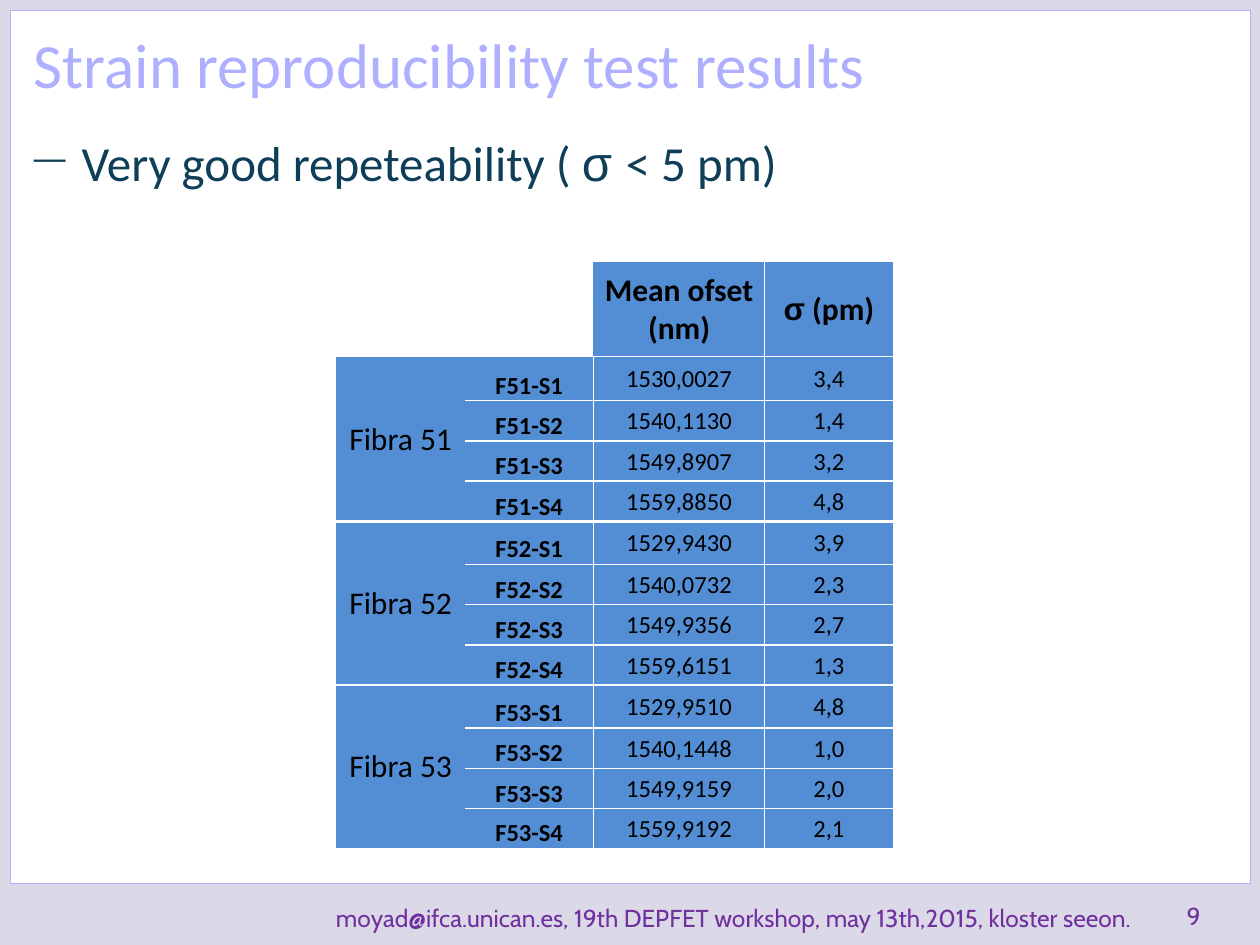
from dataclasses import dataclass

from lxml.etree import SubElement
from pptx import Presentation
from pptx.dml.color import RGBColor
from pptx.enum.shapes import MSO_SHAPE
from pptx.enum.text import MSO_ANCHOR, PP_ALIGN
from pptx.oxml.ns import qn
from pptx.util import Inches, Pt


@dataclass(frozen=True)
class Theme:
    backdrop: str = "DBD9E7"
    white: str = "FFFFFF"
    lilac: str = "AFAFFF"
    navy: str = "0E3E58"
    purple: str = "7030A0"
    black: str = "000000"
    blue: str = "538ED5"
    font: str = "Calibri"
    symbol_font: str = "Arial"
    footer_font: str = "Cabin"
    title_size: int = 36
    body_size: int = 28
    heading_size: int = 18
    small_size: int = 14


THEME = Theme()
NO_STYLE = "{2D5ABB26-0587-4C30-8999-92F81FD0307C}"
COLUMN_WIDTHS = (1.02, 1.02, 1.36, 1.02)
HEADER_HEIGHT = 0.75
SENSOR_HEIGHTS = (0.35, 0.32, 0.32, 0.32, 0.34, 0.32, 0.32, 0.32, 0.34, 0.32, 0.32, 0.31)
FIBRES = {
    51: (("1530,0027", "3,4"), ("1540,1130", "1,4"), ("1549,8907", "3,2"), ("1559,8850", "4,8")),
    52: (("1529,9430", "3,9"), ("1540,0732", "2,3"), ("1549,9356", "2,7"), ("1559,6151", "1,3")),
    53: (("1529,9510", "4,8"), ("1540,1448", "1,0"), ("1549,9159", "2,0"), ("1559,9192", "2,1")),
}


def rgb(value):
    return RGBColor.from_string(value)


def write(paragraph, pieces, size, color, font=THEME.font, bold=False):
    for piece in pieces:
        run = paragraph.add_run()
        run.text = piece
        run.font.name = THEME.symbol_font if "σ" in piece else font
        run.font.size = Pt(size)
        run.font.bold = bold
        run.font.color.rgb = rgb(color)


def add_text(slide, left, top, width, height, anchor=MSO_ANCHOR.TOP):
    frame = slide.shapes.add_textbox(
        Inches(left), Inches(top), Inches(width), Inches(height)).text_frame
    frame.word_wrap = True
    frame.vertical_anchor = anchor
    return frame.paragraphs[0]


def add_dash_bullet(paragraph):
    properties = paragraph._p.get_or_add_pPr()
    properties.set("marL", str(Inches(0.38)))
    properties.set("indent", str(-Inches(0.38)))
    color = SubElement(properties, qn("a:buClr"))
    SubElement(color, qn("a:srgbClr"), val=THEME.navy)
    SubElement(properties, qn("a:buSzPct"), val="65000")
    SubElement(properties, qn("a:buChar"), char="—")


def add_panel(slide):
    panel = slide.shapes.add_shape(
        MSO_SHAPE.RECTANGLE, Inches(0.08), Inches(0.08), Inches(9.84), Inches(6.93))
    panel.shadow.inherit = False
    panel.fill.solid()
    panel.fill.fore_color.rgb = rgb(THEME.white)
    panel.line.color.rgb = rgb(THEME.lilac)
    panel.line.width = Pt(0.25)


def set_borders(cell, **widths):
    properties = cell._tc.get_or_add_tcPr()
    for side in "LRTB":
        if side in widths:
            line = SubElement(properties, qn(f"a:ln{side}"), w=str(Pt(widths[side])))
            fill = SubElement(line, qn("a:solidFill"))
            SubElement(fill, qn("a:srgbClr"), val=THEME.white)


def fill_cell(cell, pieces, size, bold=False, anchor=MSO_ANCHOR.MIDDLE):
    cell.fill.solid()
    cell.fill.fore_color.rgb = rgb(THEME.blue)
    cell.vertical_anchor = anchor
    cell.margin_left = cell.margin_right = cell.margin_top = Inches(0.01)
    cell.margin_bottom = 0
    paragraph = cell.text_frame.paragraphs[0]
    paragraph.alignment = PP_ALIGN.CENTER
    write(paragraph, pieces, size, THEME.black, bold=bold)


def rule_cells(table, group_size):
    last_row, last_column = len(table.rows) - 1, len(table.columns) - 1
    for row in range(last_row + 1):
        for column in range(last_column + 1):
            starts_group = row > 1 and row % group_size == 1
            ends_group = row > 0 and row % group_size == 0
            inside_group = column == 0 and row > 0
            widths = {}
            if column > 1 and (row > 0 or column == last_column):
                widths["L"] = 1
            if 0 < column < last_column and (row > 0 or column > 1):
                widths["R"] = 1
            if row > 0 and (not inside_group or row % group_size == 1):
                widths["T"] = 1.5 if starts_group else 1
            if row < last_row and (not inside_group or ends_group):
                widths["B"] = 1.5 if ends_group else 1
            set_borders(table.cell(row, column), **widths)


def add_results_table(slide):
    heights = (HEADER_HEIGHT, *SENSOR_HEIGHTS)
    table = slide.shapes.add_table(
        len(heights), len(COLUMN_WIDTHS), Inches(2.67), Inches(2.08),
        Inches(sum(COLUMN_WIDTHS)), Inches(sum(heights))).table
    table.first_row = table.horz_banding = False
    table._tbl.tblPr.find(qn("a:tableStyleId")).text = NO_STYLE
    for column, width in zip(table.columns, COLUMN_WIDTHS):
        column.width = Inches(width)
    for row, height in zip(table.rows, heights):
        row.height = Inches(height)

    group_size = len(FIBRES[51])
    rule_cells(table, group_size)
    for column in (0, 1):
        table.cell(0, column).fill.background()
    fill_cell(table.cell(0, 2), ["Mean ofset (nm)"], THEME.heading_size, bold=True)
    fill_cell(table.cell(0, 3), ["σ", " (pm)"], THEME.heading_size, bold=True)
    for group, (fibre, sensors) in enumerate(FIBRES.items()):
        first = 1 + group * group_size
        table.cell(first, 0).merge(table.cell(first + group_size - 1, 0))
        fill_cell(table.cell(first, 0), [f"Fibra {fibre}"], THEME.heading_size)
        for index, (offset, sigma) in enumerate(sensors):
            row = first + index
            fill_cell(table.cell(row, 1), [f"F{fibre}-S{index + 1}"],
                      THEME.small_size, bold=True, anchor=MSO_ANCHOR.BOTTOM)
            fill_cell(table.cell(row, 2), [offset], THEME.small_size)
            fill_cell(table.cell(row, 3), [sigma], THEME.small_size)


def add_footer(slide):
    page = add_text(slide, 9.32, 6.93, 0.58, 0.5, MSO_ANCHOR.BOTTOM)
    write(page, ["9"], THEME.small_size, THEME.purple, THEME.footer_font)
    venue = add_text(slide, 1.83, 6.95, 7.25, 0.5, MSO_ANCHOR.BOTTOM)
    venue.alignment = PP_ALIGN.RIGHT
    write(venue, ["moyad@ifca.unican.es, 19th DEPFET workshop, may 13th,2015, kloster seeon."],
          THEME.small_size, THEME.purple, THEME.footer_font)


def main():
    deck = Presentation()
    deck.slide_width, deck.slide_height = Inches(10), Inches(7.5)
    slide = deck.slides.add_slide(deck.slide_layouts[6])
    slide.background.fill.solid()
    slide.background.fill.fore_color.rgb = rgb(THEME.backdrop)
    add_panel(slide)
    title = add_text(slide, 0.17, 0.15, 7.75, 0.68)
    write(title, ["Strain reproducibility test results"], THEME.title_size, THEME.lilac)
    add_footer(slide)
    finding = add_text(slide, 0.17, 1, 9.33, 3.67)
    add_dash_bullet(finding)
    write(finding, ["Very good repeteability ( ", "σ ", "< 5 pm)"], THEME.body_size, THEME.navy)
    add_results_table(slide)
    deck.save("out.pptx")


if __name__ == "__main__":
    main()
